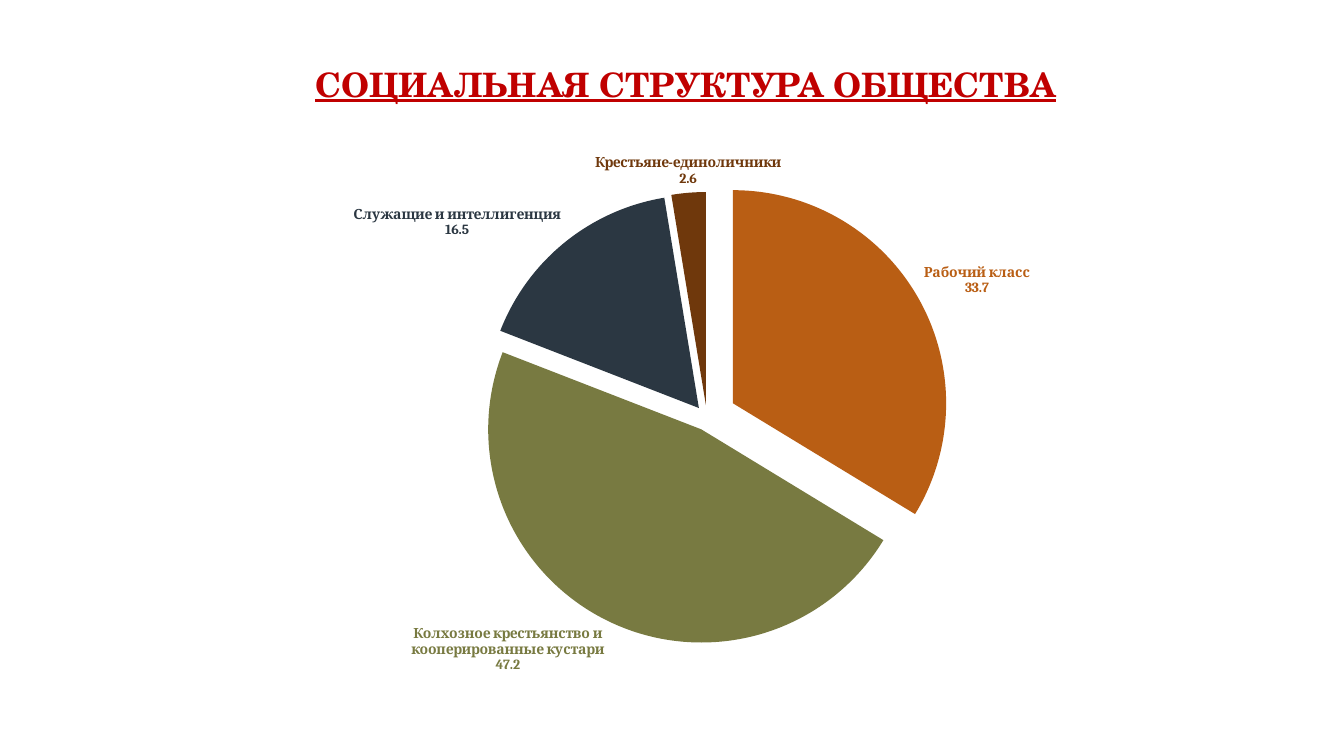
from lxml import etree
from pptx import Presentation
from pptx.chart.data import CategoryChartData
from pptx.dml.color import RGBColor
from pptx.enum.chart import XL_CHART_TYPE, XL_LABEL_POSITION
from pptx.enum.text import PP_ALIGN
from pptx.oxml import parse_xml
from pptx.oxml.ns import nsdecls, qn
from pptx.util import Pt

CENTER = PP_ALIGN.CENTER
PIE = XL_CHART_TYPE.PIE
OUTSIDE_END = XL_LABEL_POSITION.OUTSIDE_END

RED = RGBColor(0xC0, 0x00, 0x00)
BROWN_TEXT = RGBColor(0x6A, 0x3A, 0x20)
ORANGE = RGBColor(0xB9, 0x5E, 0x14)
OLIVE = RGBColor(0x78, 0x7A, 0x41)
NAVY = RGBColor(0x2B, 0x37, 0x42)
BROWN = RGBColor(0x6F, 0x38, 0x0C)

TITLE_FONT = "TeX Gyre Schola"
CHART_FONT = "Cambria"

# Social group, share in percent, colour, distance from the centre in percent
GROUPS = [
    ("Рабочий класс", 33.7, ORANGE, 14),
    ("Колхозное крестьянство и кооперированные кустари", 47.2, OLIVE, 6),
    ("Служащие и интеллигенция", 16.5, NAVY, 6),
    ("Крестьяне-единоличники", 2.6, BROWN, 6),
]

# Plot area in percent of the chart
PLOT_AREA = {"x": 34.3, "y": 12.5, "w": 37, "h": 74.2}


def add_title(slide, left, top, width, height):
    frame = slide.shapes.add_textbox(left, top, width, height).text_frame
    frame.word_wrap = True
    title = frame.paragraphs[0]
    title.text = "СОЦИАЛЬНАЯ СТРУКТУРА ОБЩЕСТВА"
    title.alignment = CENTER
    title.font.name = TITLE_FONT
    title.font.size = Pt(24)
    title.font.bold = True
    title.font.underline = True
    title.font.color.rgb = RED


def set_plot_area(chart):
    plot_area = chart.plots[0]._element.getparent()
    for layout in plot_area.findall(qn("c:layout")):
        plot_area.remove(layout)
    sides = "".join(f'<c:{side} val="{percent / 100}"/>' for side, percent in PLOT_AREA.items())
    plot_area.insert(0, parse_xml(
        f'<c:layout {nsdecls("c")}><c:manualLayout><c:layoutTarget val="inner"/>'
        f'<c:xMode val="edge"/><c:yMode val="edge"/>{sides}</c:manualLayout></c:layout>'))


def style_slice(point, color, distance):
    fill = point.format.fill
    fill.solid()
    fill.fore_color.rgb = color
    point.format.line.fill.background()

    # Pull the slice away from the centre
    slice_properties = fill._xPr
    explosion = etree.Element(qn("c:explosion"), val=str(distance))
    slice_properties.addprevious(explosion)

    # Group name above its share
    label = point.data_label
    label.font.size = Pt(10)
    label.font.bold = True
    label.font.name = CHART_FONT
    label.font.color.rgb = color
    label.position = OUTSIDE_END
    label_element = label._get_or_add_dLbl()
    label_element.find(qn("c:showCatName")).set("val", "1")
    etree.SubElement(label_element, qn("c:separator")).text = "\n"


def add_social_pie(slide, left, top, width, height):
    shares = CategoryChartData()
    shares.categories = [group[0] for group in GROUPS]
    shares.add_series("Series 1", [group[1] for group in GROUPS])
    chart = slide.shapes.add_chart(PIE, left, top, width, height, shares).chart
    chart.has_title = False
    chart.has_legend = False
    chart.font.name = CHART_FONT
    chart.font.size = Pt(10)
    chart.font.color.rgb = BROWN_TEXT
    chart.plots[0].vary_by_categories = True
    set_plot_area(chart)

    points = chart.plots[0].series[0].points
    for index, (_, _, color, distance) in enumerate(GROUPS):
        style_slice(points[index], color, distance)


def main():
    deck = Presentation()
    deck.slide_width, deck.slide_height = Pt(960), Pt(540)
    slide = deck.slides.add_slide(deck.slide_layouts[6])
    add_title(slide, Pt(36), Pt(42), Pt(907.5), Pt(36))
    add_social_pie(slide, Pt(70.5), Pt(95), Pt(823), Pt(410.5))
    deck.save("out.pptx")


if __name__ == "__main__":
    main()
